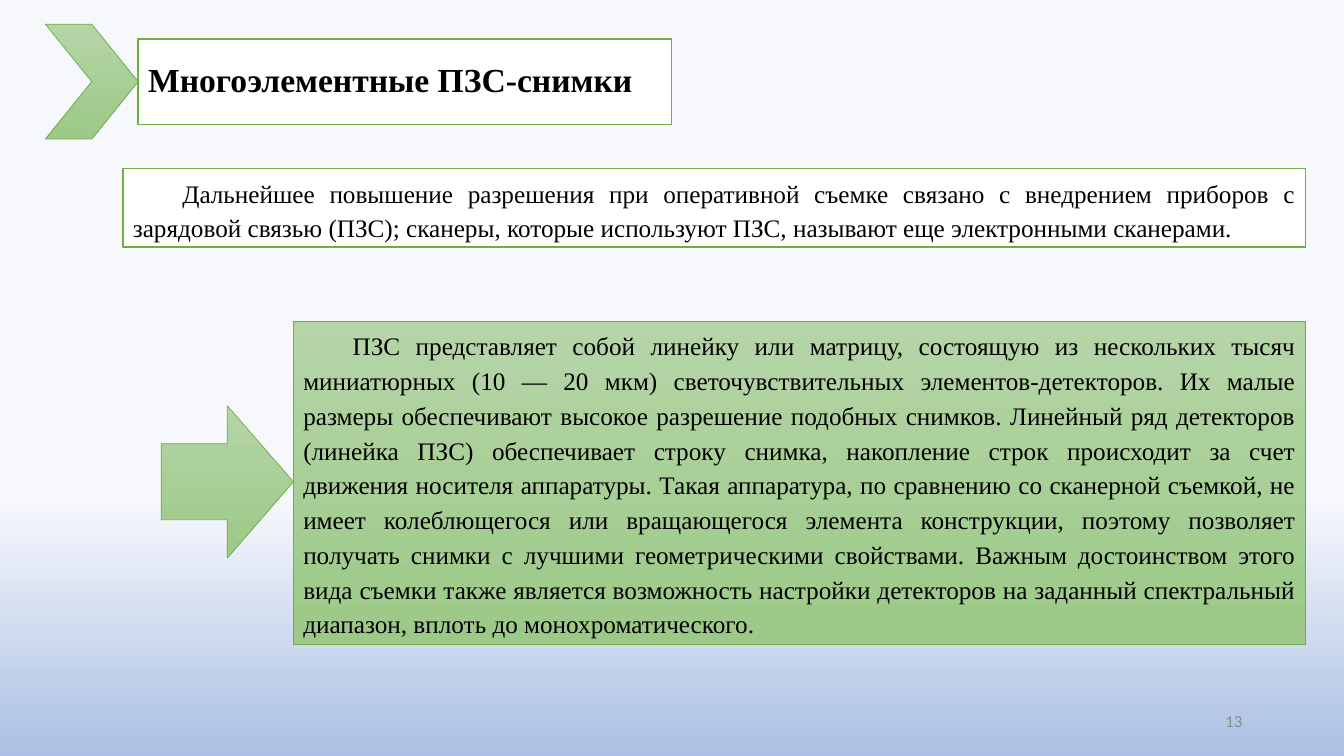
import pptx
import pptx.util
import pptx.dml.color
import pptx.enum.shapes
import pptx.enum.text

RGBColor = pptx.dml.color.RGBColor
Inches = pptx.util.Inches
Pt = pptx.util.Pt
MSO_SHAPE = pptx.enum.shapes.MSO_SHAPE
PP_ALIGN = pptx.enum.text.PP_ALIGN
MSO_ANCHOR = pptx.enum.text.MSO_ANCHOR
MSO_AUTO_SIZE = pptx.enum.text.MSO_AUTO_SIZE

HEADING = "Многоэлементные ПЗС-снимки"
INTRO = (
    "Дальнейшее повышение разрешения при оперативной съемке связано с внедрением "
    "приборов с зарядовой связью (ПЗС); сканеры, которые используют ПЗС, называют "
    "еще электронными сканерами."
)
DETAILS = (
    "ПЗС представляет собой линейку или матрицу, состоящую из нескольких тысяч "
    "миниатюрных (10 — 20 мкм) светочувствительных элементов-детекторов. Их малые "
    "размеры обеспечивают высокое разрешение подобных снимков. Линейный ряд детекторов "
    "(линейка ПЗС) обеспечивает строку снимка, накопление строк происходит за счет "
    "движения носителя аппаратуры. Такая аппаратура, по сравнению со сканерной съемкой, "
    "не имеет колеблющегося или вращающегося элемента конструкции, поэтому позволяет "
    "получать снимки с лучшими геометрическими свойствами. Важным достоинством этого "
    "вида съемки также является возможность настройки детекторов на заданный "
    "спектральный диапазон, вплоть до монохроматического."
)
PAGE_NUMBER = "13"

BLACK = RGBColor(0x00, 0x00, 0x00)
WHITE = RGBColor(0xFF, 0xFF, 0xFF)
GREY = RGBColor(0x8C, 0x8C, 0x8C)
GREEN = RGBColor(0x70, 0xAD, 0x47)
GREEN_FADE = ((0, RGBColor(0xB5, 0xD5, 0xA7)), (1, RGBColor(0x9C, 0xC9, 0x87)))
SKY_FADE = ((0.66, RGBColor(0xF6, 0xF8, 0xFC)), (1, RGBColor(0xAB, 0xC0, 0xE4)))

SLIDE_WIDTH, SLIDE_HEIGHT = 13.33, 7.5
RIGHT_EDGE = 12.95
HEADING_LEFT, INTRO_LEFT, DETAILS_LEFT = 1.37, 1.22, 2.91
HEADING_MIDDLE, DETAILS_MIDDLE = 0.81, 4.78
BODY_FORMAT = dict(align=PP_ALIGN.JUSTIFY, indent=0.49, spacing=1.15, after=10,
                   anchor=MSO_ANCHOR.TOP, grow=True)


def fade(fill, stops):
    fill.gradient()
    fill.gradient_angle = 270
    for stop, (position, color) in zip(fill.gradient_stops, stops):
        stop.position = position
        stop.color.rgb = color


def add_block(slide, preset, left, middle, width, height, filled):
    block = slide.shapes.add_shape(preset, Inches(left), Inches(middle - height / 2),
                                   Inches(width), Inches(height))
    block.shadow.inherit = False
    block.line.color.rgb = GREEN
    block.line.width = Pt(0.5 if filled else 1)
    if filled:
        fade(block.fill, GREEN_FADE)
    else:
        block.fill.solid()
        block.fill.fore_color.rgb = WHITE
    return block


def write(holder, text, size=18, font="Times New Roman", color=BLACK, bold=False,
          align=PP_ALIGN.LEFT, indent=0, spacing=1.0, after=0,
          anchor=MSO_ANCHOR.MIDDLE, grow=False):
    frame = holder.text_frame
    frame.word_wrap = True
    frame.vertical_anchor = anchor
    frame.auto_size = MSO_AUTO_SIZE.SHAPE_TO_FIT_TEXT if grow else MSO_AUTO_SIZE.NONE
    paragraph = frame.paragraphs[0]
    paragraph.alignment = align
    paragraph.line_spacing = spacing
    paragraph.space_after = Pt(after)
    paragraph._p.get_or_add_pPr().set("indent", str(Inches(indent)))
    run = paragraph.add_run()
    run.text = text
    run.font.size = Pt(size)
    run.font.name = font
    run.font.bold = bold
    run.font.color.rgb = color


def main():
    deck = pptx.Presentation()
    deck.slide_width, deck.slide_height = Inches(SLIDE_WIDTH), Inches(SLIDE_HEIGHT)
    slide = deck.slides.add_slide(deck.slide_layouts[6])
    fade(slide.background.fill, SKY_FADE)

    heading = add_block(slide, MSO_SHAPE.RECTANGLE, HEADING_LEFT, HEADING_MIDDLE,
                        5.29, 0.85, filled=False)
    write(heading, HEADING, size=24, bold=True, spacing=0.9)

    page_number = slide.shapes.add_textbox(Inches(9.42), Inches(6.95), Inches(3), Inches(0.4))
    write(page_number, PAGE_NUMBER, size=12, font="Calibri", color=GREY, align=PP_ALIGN.RIGHT)

    chevron_width, arrow_width = 0.92, 1.31
    add_block(slide, MSO_SHAPE.CHEVRON, HEADING_LEFT - chevron_width, HEADING_MIDDLE,
              chevron_width, 1.14, filled=True)

    intro = add_block(slide, MSO_SHAPE.RECTANGLE, INTRO_LEFT, 2.06,
                      RIGHT_EDGE - INTRO_LEFT, 0.78, filled=False)
    write(intro, INTRO, **BODY_FORMAT)

    details = add_block(slide, MSO_SHAPE.RECTANGLE, DETAILS_LEFT, DETAILS_MIDDLE + 0.01,
                        RIGHT_EDGE - DETAILS_LEFT, 3.21, filled=True)
    write(details, DETAILS, **BODY_FORMAT)

    add_block(slide, MSO_SHAPE.RIGHT_ARROW, DETAILS_LEFT - arrow_width, DETAILS_MIDDLE,
              arrow_width, 1.51, filled=True)

    deck.save("out.pptx")


if __name__ == "__main__":
    main()
